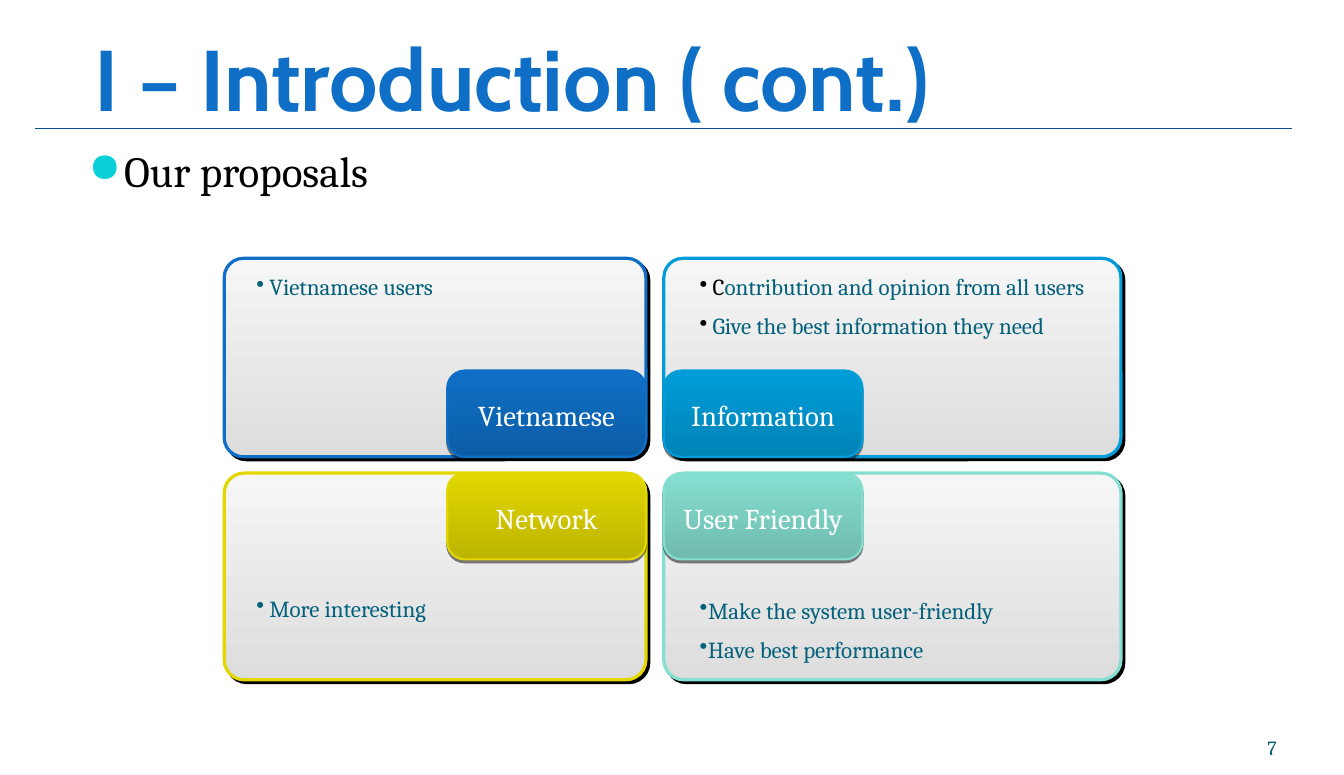
from lxml.etree import SubElement
from pptx import Presentation
from pptx.dml.color import RGBColor
from pptx.enum.shapes import MSO_CONNECTOR, MSO_SHAPE
from pptx.enum.text import MSO_ANCHOR, PP_ALIGN
from pptx.oxml.ns import qn
from pptx.util import Cm, Pt

COLORS = {
    "title": "0F6FC6", "black": "000000", "white": "FFFFFF",
    "note": "04617B", "number": "045D75", "rule": "095295", "bullet": "0BD0D9",
    "card_top": "F6F6F6", "card_bottom": "DDDDDD",
    "blue": "0F6FC6", "sky": "009DD9", "yellow": "E2D700", "mint": "85DFD0",
}

TITLE = "I – Introduction ( cont.)"
HEADING = "Our proposals"
PAGE = "7"
PROPOSALS = [
    {"label": "Vietnamese", "color": "blue", "column": 0, "row": 0,
     "notes": ["Vietnamese users"],
     "box": (6.05, 6.58, 7.82, 0.94), "bullet": "note", "hang": 0.32},
    {"label": "Information", "color": "sky", "column": 1, "row": 0,
     "notes": [[("C", "black"), ("ontribution and opinion from all users", "note")],
               "Give the best information they need"],
     "box": (16.94, 6.58, 10.59, 3), "bullet": "black", "hang": 0.32},
    {"label": "Network", "color": "yellow", "column": 0, "row": 1,
     "notes": ["More interesting"],
     "box": (6.05, 14.48, 6.35, 0.94), "bullet": "note", "hang": 0.32},
    {"label": "User Friendly", "color": "mint", "column": 1, "row": 1,
     "notes": ["Make the system user-friendly", "Have best performance"],
     "box": (16.94, 14.53, 10.36, 1.96), "bullet": "note", "hang": 0.21},
]

COLUMNS = [(5.51, 10.36), (16.31, 11.23)]
ROWS = [(6.35, 4.88), (11.63, 5.08)]
TAB_WIDTH, TAB_HEIGHT = 4.88, 2.12
LABEL_WIDTH, LABEL_HEIGHT = 4.6, 1.02


def rgb(name):
    return RGBColor.from_string(COLORS[name])


def add_shadow(effects, distance, angle, alpha):
    shadow = SubElement(effects, qn("a:outerShdw"), dist=str(Pt(distance)),
                        dir=str(angle * 60000), algn="ctr", rotWithShape="0")
    tint = SubElement(shadow, qn("a:srgbClr"), val=COLORS["black"])
    SubElement(tint, qn("a:alpha"), val=str(alpha * 1000))


def add_bullet(paragraph, char, color, hang, percent):
    properties = paragraph._p.get_or_add_pPr()
    properties.set("marL", str(Cm(hang)))
    properties.set("indent", str(-Cm(hang)))
    tint = SubElement(properties, qn("a:buClr"))
    SubElement(tint, qn("a:srgbClr"), val=COLORS[color])
    SubElement(properties, qn("a:buSzPct"), val=str(percent * 1000))
    SubElement(properties, qn("a:buChar"), char=char)


def add_text(slide, paragraphs, box, *, size, color, font="Cambria", bold=False,
             align=PP_ALIGN.LEFT, anchor=MSO_ANCHOR.TOP, insets=(0.25, 0.13, 0.25, 0.13),
             bullet=None, shadow=False):
    frame = slide.shapes.add_textbox(*map(Cm, box)).text_frame
    frame.word_wrap = True
    frame.vertical_anchor = anchor
    (frame.margin_left, frame.margin_top,
     frame.margin_right, frame.margin_bottom) = map(Cm, insets)
    for index, content in enumerate(paragraphs):
        paragraph = frame.add_paragraph() if index else frame.paragraphs[0]
        if bullet:
            add_bullet(paragraph, *bullet)
        paragraph.alignment = align
        if index:
            paragraph.space_before = Pt(size / 2)
        runs = [(content, color)] if isinstance(content, str) else content
        for words, tint in runs:
            run = paragraph.add_run()
            run.text = words
            run.font.size = Pt(size)
            run.font.name = font
            run.font.bold = bold
            run.font.color.rgb = rgb(tint)
            if shadow:
                properties = run._r.get_or_add_rPr()
                effects = SubElement(properties, qn("a:effectLst"))
                properties.find(qn("a:solidFill")).addnext(effects)
                add_shadow(effects, 2, 45, 100)


def add_panel(slide, box, *, radius, top, bottom, outline, width, shadow, shade=None):
    panel = slide.shapes.add_shape(MSO_SHAPE.ROUNDED_RECTANGLE, *map(Cm, box))
    panel.adjustments[0] = radius
    panel.fill.gradient()
    panel.fill.gradient_angle = 270
    for stop, name in zip(panel.fill.gradient_stops, (top, bottom)):
        stop.color.rgb = rgb(name)
    if shade:
        last = panel._element.spPr.findall(".//" + qn("a:gs"))[-1]
        SubElement(last[0], qn("a:shade"), val=str(shade * 1000))
    panel.line.color.rgb = rgb(outline)
    panel.line.width = Pt(width)
    panel.shadow.inherit = False
    add_shadow(panel._element.spPr.find(qn("a:effectLst")), *shadow)


def add_card(slide, proposal):
    left, width = COLUMNS[proposal["column"]]
    top, height = ROWS[proposal["row"]]
    color = proposal["color"]
    add_panel(slide, (left, top, width, height), radius=0.096, top="card_top",
              bottom="card_bottom", outline=color, width=2.25, shadow=(2.8, 45, 100))


def add_tab(slide, proposal):
    left, width = COLUMNS[proposal["column"]]
    top, height = ROWS[proposal["row"]]
    color = proposal["color"]
    tab_left = left if proposal["column"] else left + width - TAB_WIDTH
    tab_top = top if proposal["row"] else top + height - TAB_HEIGHT
    add_panel(slide, (tab_left, tab_top, TAB_WIDTH, TAB_HEIGHT), radius=0.2, top=color,
              bottom=color, outline=color, width=1.5, shadow=(2, 90, 50), shade=67)
    label_box = (tab_left + (TAB_WIDTH - LABEL_WIDTH) / 2,
                 tab_top + (TAB_HEIGHT - LABEL_HEIGHT) / 2, LABEL_WIDTH, LABEL_HEIGHT)
    add_text(slide, [proposal["label"]], label_box, size=20, color="white",
             align=PP_ALIGN.CENTER, shadow=True)


def main():
    deck = Presentation()
    deck.slide_width, deck.slide_height = Cm(33.02), Cm(19.05)
    slide = deck.slides.add_slide(deck.slide_layouts[6])

    add_text(slide, [TITLE], (2.33, 0, 29.72, 3.17), size=60, color="title", font="Cabin",
             bold=True, anchor=MSO_ANCHOR.BOTTOM, insets=(0, 0.15, 0, 0))
    add_text(slide, [HEADING], (1.9, 3.39, 29.72, 12.19), size=30, color="black",
             insets=(0.28, 0.15, 0.28, 0.15), bullet=("●", "bullet", 0.87, 95))
    add_text(slide, [PAGE], (28.62, 17.65, 2.75, 1.02), size=14, color="number",
             align=PP_ALIGN.RIGHT, anchor=MSO_ANCHOR.BOTTOM, insets=(0, 0, 0, 0))

    rule = slide.shapes.add_connector(MSO_CONNECTOR.STRAIGHT,
                                      Cm(0.85), Cm(3.17), Cm(31.75), Cm(3.17))
    rule.line.color.rgb = rgb("rule")
    rule.line.width = Pt(0.75)
    SubElement(rule._element.spPr, qn("a:effectLst"))

    for proposal in PROPOSALS:
        add_card(slide, proposal)
    for proposal in PROPOSALS:
        add_tab(slide, proposal)
        add_text(slide, proposal["notes"], proposal["box"], size=16, color="note",
                 bullet=("•", proposal["bullet"], proposal["hang"], 100))

    deck.save("out.pptx")


if __name__ == "__main__":
    main()
